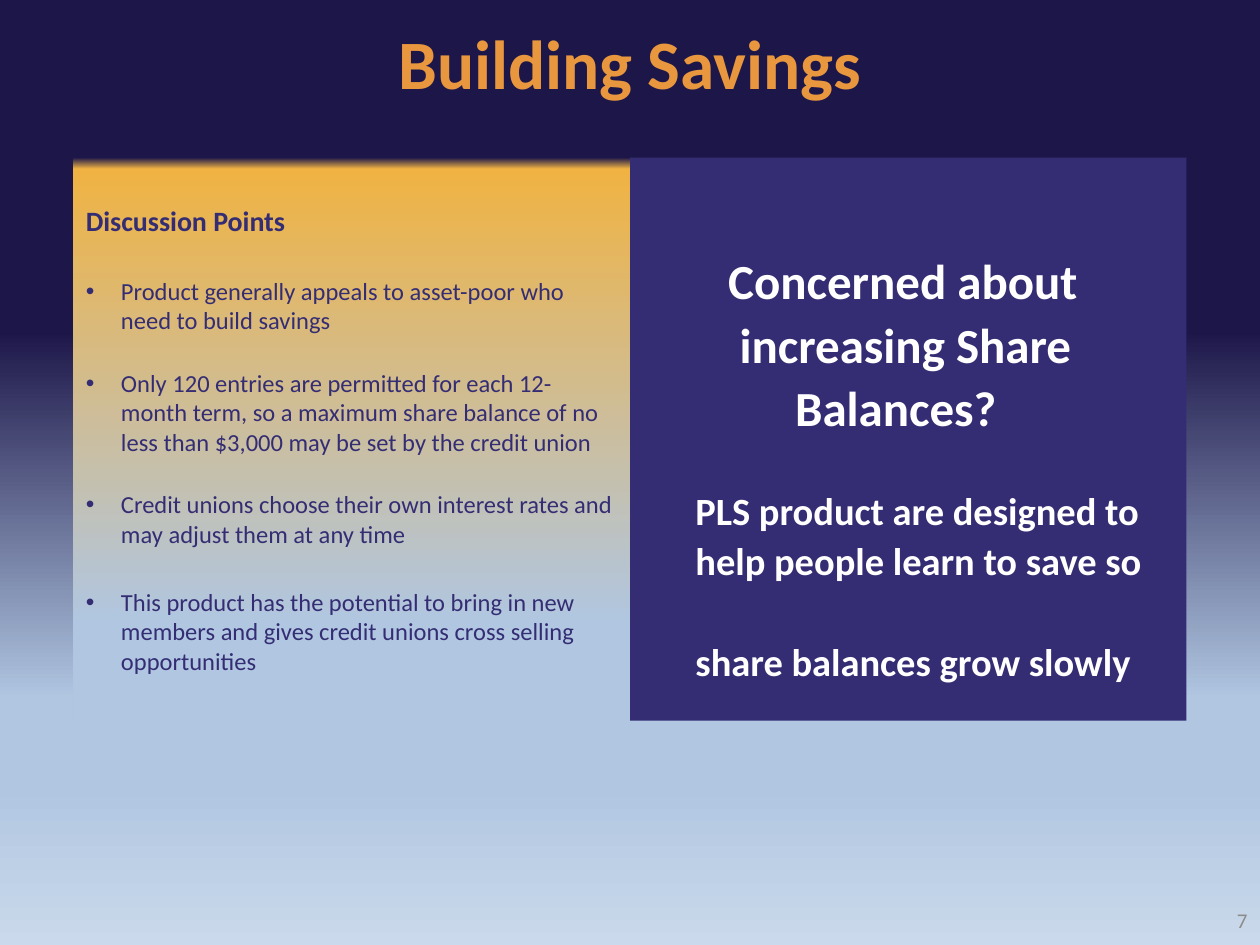
from dataclasses import dataclass

from lxml import etree
from pptx import Presentation
from pptx.dml.color import RGBColor
from pptx.enum import shapes, text
from pptx.oxml.ns import qn
from pptx.util import Cm, Pt


@dataclass(frozen=True)
class Theme:
    font: str = "Calibri"
    orange: str = "E9973E"
    indigo: str = "342D73"
    white: str = "FFFFFF"
    grey: str = "8C8C8C"
    title: float = 39.6
    question: float = 28
    answer: float = 22
    heading: float = 16
    body: float = 14
    number: float = 12
    backdrop: tuple = ((35, "1D1749"), (74, "B0C6E1"), (83, "B0C6E1"), (100, "CAD9EB"))
    panel: tuple = ((0, "1D1749"), (2, "F0B343"), (83, "B0C6E1"), (100, "B0C6E1"))


T = Theme()
BULLETS = [
    "Product generally appeals to asset-poor who need to build savings",
    "Only 120 entries are permitted for each 12-month term, so a maximum share "
    "balance of no less than $3,000 may be set by the credit union",
    "Credit unions choose their own interest rates and may adjust them at any time",
    "This product has the potential to bring in new members and gives credit unions "
    "cross selling opportunities",
]


def fill_gradient(fill, element, stops):
    """Fill from top to bottom with any number of (percent, colour) stops."""
    fill.gradient()
    fill.gradient_angle = 270
    stop_list = element.find(".//" + qn("a:gsLst"))
    for old in list(stop_list):
        stop_list.remove(old)
    for percent, colour in stops:
        gs = etree.SubElement(stop_list, qn("a:gs"), pos=str(percent * 1000))
        etree.SubElement(gs, qn("a:srgbClr"), val=colour)


def set_frame(sp, anchor, top=0.13):
    tf = sp.text_frame
    settings = dict(word_wrap=True, vertical_anchor=anchor, margin_left=Cm(0.25),
                    margin_right=Cm(0.25), margin_top=Cm(top), margin_bottom=Cm(0.13))
    for name, value in settings.items():
        setattr(tf, name, value)
    return tf


def write(tf, words, size, colour, bold=False, bullet=None, left=0, hang=0, **layout):
    """Add a paragraph; left and hang are in centimetres."""
    p = tf.paragraphs[0] if not tf.text else tf.add_paragraph()
    props = p._p.get_or_add_pPr()
    props.set("marL", str(Cm(left)))
    props.set("indent", str(-Cm(hang)))
    if bullet:
        etree.SubElement(props, qn("a:buFont"), typeface="Arial")
        etree.SubElement(props, qn("a:buChar"), char=bullet)
    for name, value in {"alignment": text.PP_ALIGN.LEFT, **layout}.items():
        setattr(p, name, value)
    r = p.add_run()
    r.text = words
    for name, value in dict(name=T.font, size=Pt(size), bold=bold).items():
        setattr(r.font, name, value)
    r.font.color.rgb = RGBColor.from_string(colour)


def add_panel(s, box):
    sp = s.shapes.add_shape(shapes.MSO_SHAPE.RECTANGLE, *map(Cm, box))
    sp.shadow.inherit = False
    sp.line.fill.background()
    return sp


def add_label(s, box, words, size, colour, bold, alignment):
    """One line of text, centred vertically in its box."""
    tf = set_frame(s.shapes.add_textbox(*map(Cm, box)), text.MSO_ANCHOR.MIDDLE)
    write(tf, words, size, colour, bold, alignment=alignment)


def add_question(s, box):
    sp = add_panel(s, box)
    sp.fill.solid()
    sp.fill.fore_color.rgb = RGBColor.from_string(T.indigo)
    tf = set_frame(sp, text.MSO_ANCHOR.TOP, top=1.78)
    lines = [
        ("Concerned about", T.question, 0.66, 0),
        ("increasing Share", T.question, 0.89, 0),
        ("Balances?", T.question, 2.01, 0),
        ("PLS product are designed to help people learn to save so", T.answer, 0, 27),
        ("share balances grow slowly", T.answer, 0, 29),
    ]
    for words, size, shift, gap in lines:
        write(tf, words, size, T.white, True, left=1.07 + shift,
              line_spacing=1.08, space_before=Pt(gap))


def add_discussion(s, box):
    sp = add_panel(s, box)
    fill_gradient(sp.fill, sp.element, T.panel)
    tf = set_frame(sp, text.MSO_ANCHOR.TOP, top=0.93)
    write(tf, "Discussion Points", T.heading, T.indigo, True)
    for words, gap in zip(BULLETS, (22, 19, 19, 22)):
        write(tf, words, T.body, T.indigo, bullet="•", left=0.71, hang=0.71,
              space_before=Pt(gap))


def main():
    prs = Presentation()
    prs.slide_width, prs.slide_height = Cm(25.4), Cm(19.05)
    s = prs.slides.add_slide(prs.slide_layouts[6])
    fill_gradient(s.background.fill, s.element, T.backdrop)

    middle, top, width, height = 12.7, 3.18, 11.22, 11.35
    add_label(s, (1.27, 0.36, 22.86, 1.78), "Building Savings", T.title, T.orange,
              True, text.PP_ALIGN.CENTER)
    add_question(s, (middle, top, width, height))
    add_discussion(s, (middle - width, top, width, height))
    add_label(s, (19.48, 18.03, 5.92, 1.02), "7", T.number, T.grey,
              False, text.PP_ALIGN.RIGHT)
    prs.save("out.pptx")


if __name__ == "__main__":
    main()
